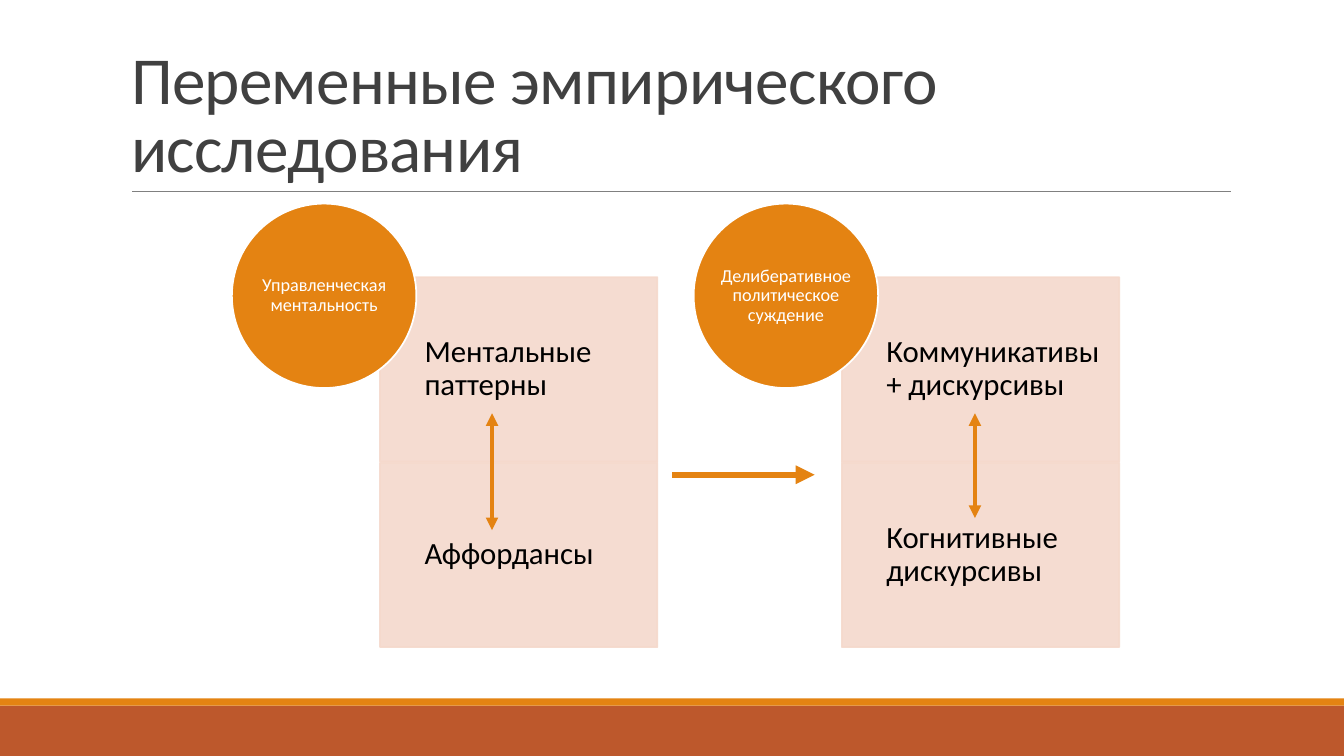
import pptx
import pptx.dml.color
import pptx.enum.shapes
import pptx.enum.text
import pptx.oxml.ns
import pptx.oxml.xmlchemy
import pptx.util
import lxml.etree

SHAPES = pptx.enum.shapes.MSO_SHAPE
ALIGN = pptx.enum.text.PP_ALIGN
ANCHOR = pptx.enum.text.MSO_ANCHOR
qn = pptx.oxml.ns.qn


def px(length):
    return pptx.util.Emu(length * 9144)


def color(value):
    return pptx.dml.color.RGBColor.from_string(value)


def write(shape, text, size, ink, align=ALIGN.LEFT, anchor=ANCHOR.MIDDLE,
          insets=(0, 0, 0, 0), line_spacing=0.9, tracking=None):
    frame = shape.text_frame
    frame.word_wrap = True
    frame.auto_size = pptx.enum.text.MSO_AUTO_SIZE.NONE
    frame.vertical_anchor = anchor
    frame.margin_left, frame.margin_top, frame.margin_right, frame.margin_bottom = map(px, insets)
    para = frame.paragraphs[0]
    para.alignment = align
    para.line_spacing = line_spacing
    span = para.add_run()
    span.text = text
    span.font.name = "Calibri"
    span.font.size = pptx.util.Pt(size)
    span.font.color.rgb = color(ink)
    if tracking is not None:
        span.font._element.set("spc", str(tracking))


class Slide:
    accent = "E48312"
    base = "BD582C"
    panel = "F5D9CC"
    white = "FFFFFF"
    black = "000000"
    title_ink = "404040"
    rule = "808080"

    def __init__(self, deck):
        self.page = deck.slides.add_slide(deck.slide_layouts[5])

    def title(self, text, left, top, width, height):
        box = self.page.shapes.title
        box.left, box.top, box.width, box.height = map(px, (left, top, width, height))
        write(box, text, 48, self.title_ink, anchor=ANCHOR.BOTTOM,
              insets=(10, 5, 10, 5), line_spacing=0.85, tracking=-50)

    def shape(self, kind, left, top, width, height, fill, outline=None, opacity=100):
        shape = self.page.shapes.add_shape(kind, *map(px, (left, top, width, height)))
        shape.shadow.inherit = False
        shape.fill.solid()
        shape.fill.fore_color.rgb = color(fill)
        if outline:
            shape.line.color.rgb = color(outline)
            shape.line.width = pptx.util.Pt(1.25)
        else:
            shape.line.fill.background()
        if opacity < 100:
            for tint in shape._element.spPr.iter(qn("a:srgbClr")):
                lxml.etree.SubElement(tint, qn("a:alpha")).set("val", str(opacity * 1000))
        return shape

    def variable(self, text, left, top, size):
        box = self.shape(SHAPES.RECTANGLE, left, top, 275, size, self.panel, self.panel, 90)
        write(box, text, 22, self.black, insets=(44, 17, 17, 17))

    def concept(self, text, left, top, size):
        circle = self.shape(SHAPES.OVAL, left, top, size, size, self.accent, self.white)
        write(circle, text, 13, self.white, align=ALIGN.CENTER)

    def line(self, start, end, ink, width, arrowheads=()):
        line = self.page.shapes.add_connector(
            pptx.enum.shapes.MSO_CONNECTOR.STRAIGHT, *map(px, start + end))
        line.line.color.rgb = color(ink)
        line.line.width = pptx.util.Pt(width)
        outline = line.line._get_or_add_ln()
        for end_name in arrowheads:
            lxml.etree.SubElement(outline, qn("a:" + end_name)).set("type", "triangle")
        lxml.etree.SubElement(line._element.spPr, qn("a:effectLst"))


def main():
    deck = pptx.Presentation()
    deck.slide_width, deck.slide_height = px(1333), px(750)
    slide = Slide(deck)

    slide.shape(SHAPES.RECTANGLE, 0, 700, 1333, 50, slide.base)
    slide.shape(SHAPES.RECTANGLE, 0, 693, 1333, 7, slide.accent)
    slide.line((131, 190), (1221, 190), slide.rule, 0.5)
    slide.title("Переменные эмпирического исследования", 120, 31, 1100, 159)

    size = 183
    groups = [
        ("Управленческая ментальность", ["Ментальные паттерны", "Аффордансы"]),
        ("Делиберативное политическое суждение",
         ["Коммуникативы + дискурсивы", "Когнитивные дискурсивы"]),
    ]
    for column, (concept, variables) in enumerate(groups):
        left = 230 + column * 458
        for row, variable in enumerate(variables):
            slide.variable(variable, left + 147, 275 + row * (size + 1), size)
        slide.concept(concept, left, 202, size)

    for x, bottom in ((488, 526), (967, 514)):
        slide.line((x, 410), (x, bottom), slide.accent, 3, ("headEnd", "tailEnd"))
    slide.line((667, 471), (808, 471), slide.accent, 4.5, ("tailEnd",))

    deck.save("out.pptx")


if __name__ == "__main__":
    main()
